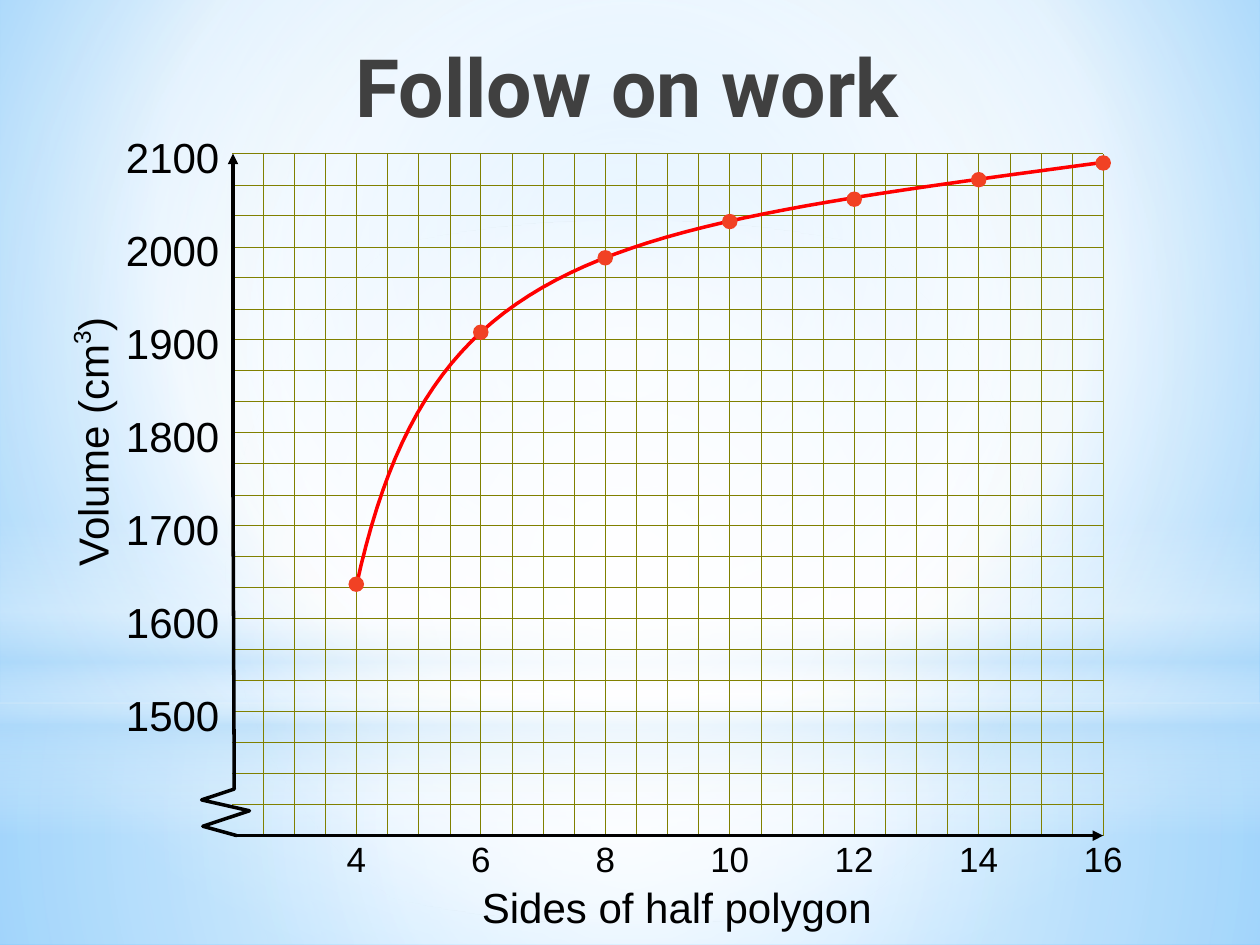
from lxml import etree
from pptx import Presentation
from pptx import util as u
from pptx.dml.color import RGBColor
from pptx.enum import shapes, text
from pptx.oxml.ns import qn

WIDE, HIGH = 10, 7.5
LEFT, TOP = 1.84, 1.22        # upper left corner of the graph paper
COL, ROW = 0.247, 0.246       # one small square
COLS, ROWS = 28, 22
INK, PAPER, CURVE, DOT, HEAD = "000000", "808000", "FF0000", "F14124", "404040"
VOLUME = {4: 1637, 6: 1908, 8: 1988, 10: 2027, 12: 2051, 14: 2072, 16: 2090}


def color(code):
    return RGBColor.from_string(code)


def node(parent, tag, **attrs):
    item = etree.SubElement(parent, qn(tag))
    for key, val in attrs.items():
        item.set(key, str(val))
    return item


def col(sides):
    return 2 * sides - 4


def row(volume):
    return (2100 - volume) * 0.03


def bezier(a, b, c, d, steps=48):
    """Points along a cubic curve from a to d."""
    for i in range(steps + 1):
        t = i / steps
        s = 1 - t
        yield tuple(s**3 * p + 3 * s * s * t * q + 3 * s * t * t * m + t**3 * n
                    for p, q, m, n in zip(a, b, c, d))


class Graph:
    """Places elements in squares of the graph paper, counted from its upper left."""
    font = {"name": "Arial", "size": 24, "bold": False, "color": INK}

    def __init__(self, slide):
        self.slide = slide
        self.shapes = slide.shapes

    def spot(self, c, r):
        return u.Inches(LEFT + c * COL), u.Inches(TOP + r * ROW)

    def box(self, c, r, wide, high):
        """Left, top, width and height of a box centred at column c, row r."""
        return (*self.spot(c - wide / 2, r - high / 2),
                u.Inches(wide * COL), u.Inches(high * ROW))

    def shade(self, fill, root, stops, to=None):
        """Gradient of (place, colour, opacity) stops: round if to is given, else downward."""
        fill.gradient()
        grad = next(root.iter(qn("a:gradFill")))
        grad.clear()
        grad.set("rotWithShape", "1")
        items = node(grad, "a:gsLst")
        for place, code, alpha in stops:
            stop = node(items, "a:gs", pos=place * 1000)
            tint = node(stop, "a:srgbClr", val=code)
            if alpha < 100:
                node(tint, "a:alpha", val=alpha * 1000)
        if to:
            ring = node(grad, "a:path", path="circle")
            node(ring, "a:fillToRect", **{k: v * 1000 for k, v in zip("ltrb", to)})
        else:
            node(grad, "a:lin", ang=90 * 60000, scaled=0)

    def band(self, top, high, stops, to=None, kind=shapes.MSO_SHAPE.RECTANGLE):
        """Full-width backdrop; top and high are shares of the slide's height."""
        item = self.shapes.add_shape(kind, 0, u.Inches(top * HIGH),
                                     u.Inches(WIDE), u.Inches(high * HIGH))
        item.shadow.inherit = False
        item.line.fill.background()
        self.shade(item.fill, item.element, stops, to)

    def pen(self, item, code, width, arrow=False):
        item.line.color.rgb = color(code)
        item.line.width = u.Pt(width)
        if arrow:
            node(item.line._get_or_add_ln(), "a:tailEnd", type="triangle")

    def line(self, start, end, code, width, arrow=False):
        item = self.shapes.add_connector(shapes.MSO_CONNECTOR.STRAIGHT,
                                         *self.spot(*start), *self.spot(*end))
        self.pen(item, code, width, arrow)
        node(item.element.spPr, "a:effectLst")

    def trace(self, points, code, width, arrow=False):
        first, *rest = [self.spot(*p) for p in points]
        path = self.shapes.build_freeform(*first)
        path.add_line_segments(rest, close=False)
        item = path.convert_to_shape()
        item.fill.background()
        self.pen(item, code, width, arrow)
        item.shadow.inherit = False

    def dot(self, c, r, size=0.5):
        item = self.shapes.add_shape(shapes.MSO_SHAPE.OVAL, *self.box(c, r, size, size))
        item.shadow.inherit = False
        item.fill.solid()
        item.fill.fore_color.rgb = color(DOT)
        item.line.fill.background()

    def label(self, c, r, wide, high, *words, turn=0, **style):
        """Centred text; every second word is raised."""
        item = self.shapes.add_textbox(*self.box(c, r, wide, high))
        item.rotation = turn
        frame = item.text_frame
        form = {"margin_left": 0, "margin_right": 0, "margin_top": 0, "margin_bottom": 0,
                "word_wrap": True, "vertical_anchor": text.MSO_ANCHOR.MIDDLE}
        for key, val in form.items():
            setattr(frame, key, val)
        para = frame.paragraphs[0]
        para.alignment = text.PP_ALIGN.CENTER
        look = {**self.font, **style}
        tint = look.pop("color")
        look["size"] = u.Pt(look["size"])
        for i, word in enumerate(words):
            run = para.add_run()
            run.text = word
            for key, val in look.items():
                setattr(run.font, key, val)
            run.font.color.rgb = color(tint)
            if i % 2:
                run.font._element.set("baseline", "42000")


def backdrop(g):
    mid = (50, 50, 50, 50)
    white, blue = "FFFFFF", "B4DCFA"
    g.shade(g.slide.background.fill, g.slide.element,
            [(0, "9ED5FF", 100), (60, white, 100), (100, "5BB9FF", 100)], (20, 10, 20, 60))
    g.band(0.744, 0.256, [(0, white, 91), (37, white, 76), (100, blue, 79)], mid)
    g.band(0, 0.744, [(0, white, 89), (48, white, 62), (100, blue, 79)], mid)
    g.band(0.55, 0.333, [(0, white, 0), (29, white, 30), (45, blue, 40),
                         (55, white, 26), (65, blue, 60), (100, white, 0)])
    g.band(0.233, 0.744, [(0, white, 100), (56, white, 0)], mid, shapes.MSO_SHAPE.OVAL)


def paper(g):
    weight = (0.5, 0.2)
    for c in range(1, COLS + 1):
        g.line((c, ROWS), (c, 0), PAPER, weight[c % 2])
    for r in range(ROWS):
        g.line((0, r), (COLS, r), PAPER, weight[r % 2])


def axes(g):
    g.line((0.08, ROWS), (COLS, ROWS), INK, 2, True)
    for sides in VOLUME:
        g.label(col(sides), 22.75, 2.4, 1.5, str(sides), size=20)
    for volume in range(1500, 2101, 100):
        g.label(-1.9, row(volume) + 0.1, 4, 1.8, str(volume))
    g.label(14.3, 24.3, 14, 2, "Sides of half polygon")
    g.label(-4.5, 9.3, 10, 2, "Volume (cm", "3", ")", turn=270)


def plot(g):
    g.trace(bezier((4, 13.95), (6.35, 3.1), (11.9, 2.45), (COLS, 0.28)), CURVE, 2)
    g.trace([(0.16, ROWS), (-0.93, 21.7), (0.57, 21.2), (-0.97, 20.85),
             (0.08, 20.5), (0.04, 11), (0.04, 0)], INK, 2, True)
    for sides, volume in VOLUME.items():
        g.dot(col(sides), row(volume))


def main():
    deck = Presentation()
    deck.slide_width, deck.slide_height = u.Inches(WIDE), u.Inches(HIGH)
    g = Graph(deck.slides.add_slide(deck.slide_layouts[6]))
    backdrop(g)
    g.label(12.7, -2.2, 29, 4, "Follow on work", name="Roboto", size=46,
            bold=True, color=HEAD)
    paper(g)
    axes(g)
    plot(g)
    deck.save("out.pptx")


if __name__ == "__main__":
    main()
